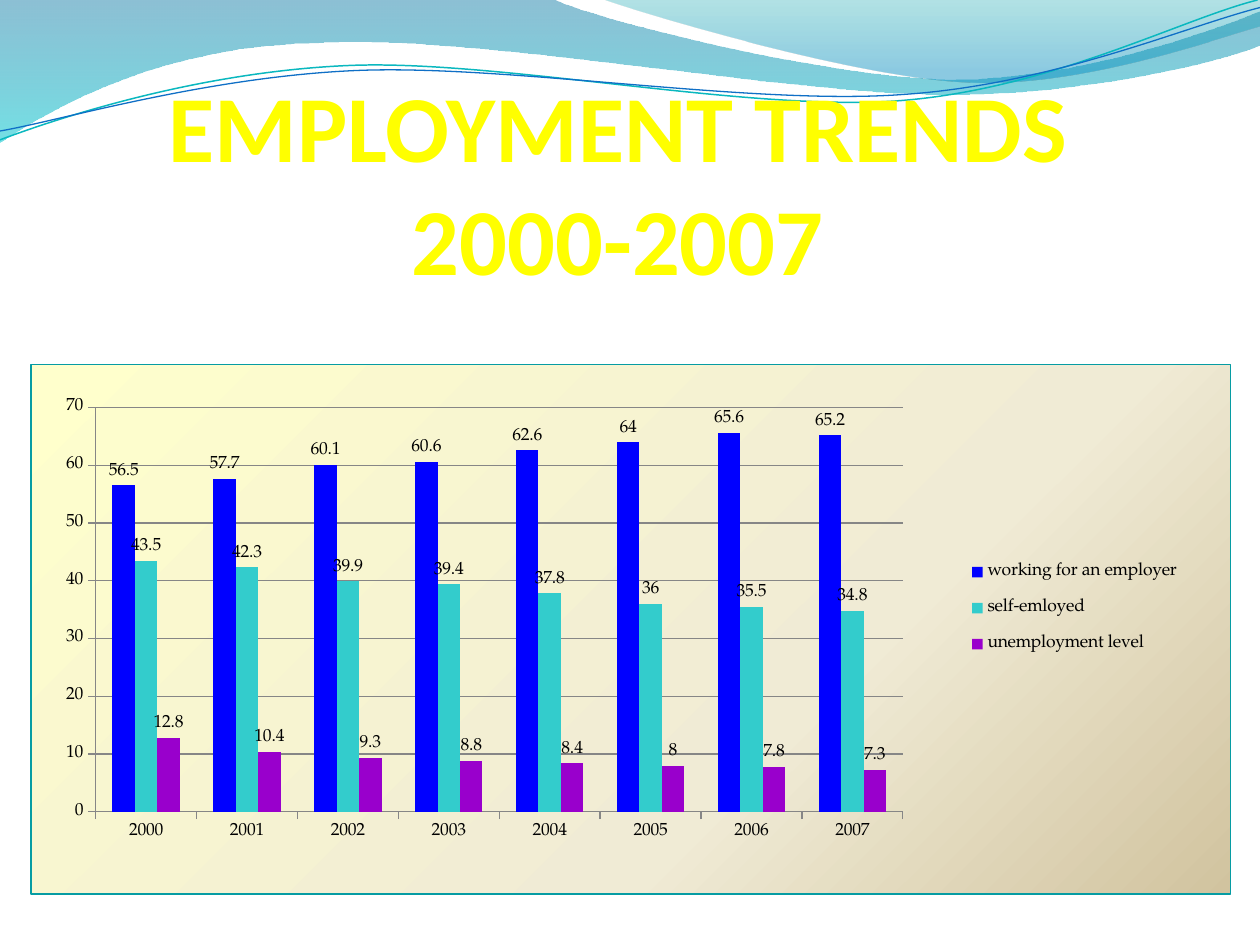
from pptx import Presentation
from pptx.chart.data import CategoryChartData
from pptx.dml.color import RGBColor
from pptx.enum import chart as ch, text
from pptx.oxml import ns, parse_xml
from pptx.util import Inches, Pt

COLORS = {
    "title": "FFFF00", "text": "000000", "axis": "868686", "border": "069CA3",
    "teal line": "0AB8BF", "blue line": "0F6FC6",
    "employer": "0000FF", "self": "33CCCC", "unemployed": "9900CC",
}
GRADIENTS = {
    "left wave": [(0, "0074A1", 45), (100, "00C6CF", 55)],
    "right wave": [(0, "00A1A9", 30), (80, "008BBF", 45)],
    "chart": [(0, "FFFFCC", 100), (65, "F0EBD5", 100), (100, "D1C39F", 100)],
}
YEARS = [str(year) for year in range(2000, 2008)]
SERIES = [
    ("working for an employer", "employer", (56.5, 57.7, 60.1, 60.6, 62.6, 64, 65.6, 65.2)),
    ("self-emloyed", "self", (43.5, 42.3, 39.9, 39.4, 37.8, 36, 35.5, 34.8)),
    ("unemployment level", "unemployed", (12.8, 10.4, 9.3, 8.8, 8.4, 8, 7.8, 7.3)),
]
WAVES = [
    ("left wave", [(0, 0), (4.4, 0), (4.76, 0.17, 6.64, 0.63, 7.58, 0.63),
                   (8.53, 0.63, 9.58, 0.26, 10, 0.09), (10, 0.36),
                   (9.83, 0.44, 8.7, 0.76, 7.46, 0.75), (6.22, 0.75, 3.82, 0.28, 2.57, 0.34),
                   (1.29, 0.36, 0.46, 0.83, 0, 1.13)]),
    ("right wave", [(4.79, 0), (5.09, 0.11, 6.82, 0.62, 7.69, 0.65),
                    (8.56, 0.69, 9.61, 0.32, 10, 0.21), (10, 0)]),
]
STRANDS = [
    ("teal line", 0.85, [(0, 1.11), (0.48, 0.93, 1.58, 0.57, 2.77, 0.52),
                         (3.95, 0.47, 5.93, 0.89, 7.13, 0.8), (8.33, 0.71, 9.38, 0.15, 9.98, 0)]),
    ("blue line", 0.75, [(0, 1.04), (0.47, 0.96, 1.64, 0.61, 2.83, 0.56),
                         (4.03, 0.51, 5.97, 0.84, 7.17, 0.75), (8.36, 0.67, 9.41, 0.21, 10, 0.06)]),
]


def rgb(name):
    """Return a named colour."""
    return RGBColor.from_string(COLORS[name])


def gradient(name, angle):
    """Return a linear gradient fill element, its angle measured clockwise."""
    stops = ""
    for pos, color, opacity in GRADIENTS[name]:
        alpha = f'<a:alpha val="{opacity * 1000}"/>' if opacity < 100 else ""
        stops += f'<a:gs pos="{pos * 1000}"><a:srgbClr val="{color}">{alpha}</a:srgbClr></a:gs>'
    return parse_xml(f'<a:gradFill {ns.nsdecls("a")} rotWithShape="1"><a:gsLst>{stops}</a:gsLst>'
                     f'<a:lin ang="{angle * 60000}" scaled="0"/></a:gradFill>')


def add_curve(s, steps, closed):
    """Add an outline whose six-number steps are cubic curves."""
    points = [(Inches(x), Inches(y)) for step in steps
              for x, y in zip(step[::2], step[1::2])]
    builder = s.shapes.build_freeform(*points[0])
    builder.add_line_segments(points[1:], close=closed)
    sp = builder.convert_to_shape()
    sp.shadow.inherit = False
    sp.fill.background()
    lines = iter(sp._element.findall(".//" + ns.qn("a:lnTo")))
    for step in steps[1:]:
        line = next(lines)
        if len(step) == 6:
            curve = parse_xml(f'<a:cubicBezTo {ns.nsdecls("a")}/>')
            line.addprevious(curve)
            for node in (line, next(lines), next(lines)):
                curve.append(node[0])
                node.getparent().remove(node)
    return sp


def add_header(s):
    """Draw the waves and strands along the top edge."""
    for name, steps in WAVES:
        sp = add_curve(s, steps, True)
        sp.line.fill.background()
        props = sp._element.spPr
        props.replace(props.find(ns.qn("a:noFill")), gradient(name, 90))
    for name, width, steps in STRANDS:
        sp = add_curve(s, steps, False)
        sp.line.color.rgb = rgb(name)
        sp.line.width = Pt(width)


def add_text(s, box, content, *, size, font, color, bold=False):
    """Add centred text standing on the bottom of its box."""
    sp = s.shapes.add_textbox(*map(Inches, box))
    tf = sp.text_frame
    tf.word_wrap = True
    tf.vertical_anchor = text.MSO_ANCHOR.BOTTOM
    tf.margin_left = tf.margin_right = tf.margin_bottom = 0
    tf.margin_top = Inches(0.05)
    p = tf.paragraphs[0]
    p.text = content
    p.alignment = text.PP_ALIGN.CENTER
    for r in p.runs:
        r.font.size, r.font.name, r.font.bold = Pt(size), font, bold
        r.font.color.rgb = rgb(color)


def set_layout(element, box, inner=False):
    """Place a chart part by fractions of the chart area."""
    for old in element.findall(ns.qn("c:layout")):
        element.remove(old)
    target = '<c:layoutTarget val="inner"/>' if inner else ""
    modes = '<c:xMode val="edge"/><c:yMode val="edge"/>'
    sizes = "".join(f'<c:{key} val="{value}"/>' for key, value in zip("xywh", box))
    layout = parse_xml(f'<c:layout {ns.nsdecls("c")}><c:manualLayout>{target}{modes}{sizes}'
                       '</c:manualLayout></c:layout>')
    if inner:
        element.insert(0, layout)
    else:
        element.find(ns.qn("c:legendPos")).addnext(layout)


def style_chart_area(chart):
    """Give the chart area its gradient and border."""
    props = parse_xml(f'<c:spPr {ns.nsdecls("c", "a")}><a:ln w="{Pt(0.75)}"><a:solidFill>'
                      f'<a:srgbClr val="{COLORS["border"]}"/></a:solidFill></a:ln></c:spPr>')
    props.insert(0, gradient("chart", 45))
    chart._chartSpace.find(ns.qn("c:chart")).addnext(props)


def add_chart(s, box):
    """Add the clustered columns of employment by year."""
    data = CategoryChartData()
    data.categories = YEARS
    for name, _, values in SERIES:
        data.add_series(name, values)
    chart = s.shapes.add_chart(ch.XL_CHART_TYPE.COLUMN_CLUSTERED, *map(Inches, box), data).chart
    chart.has_title = False
    chart.font.name, chart.font.size = "TeX Gyre Pagella", Pt(10)
    chart.font.color.rgb = rgb("text")
    style_chart_area(chart)

    plot = chart.plots[0]
    plot.gap_width, plot.overlap, plot.vary_by_categories = 150, 0, False
    for series, (_, color, _) in zip(plot.series, SERIES):
        series.format.fill.solid()
        series.format.fill.fore_color.rgb = rgb(color)
        series.invert_if_negative = False
        series.data_labels.show_value = True
        series.data_labels.position = ch.XL_LABEL_POSITION.OUTSIDE_END

    axis = chart.value_axis
    axis.minimum_scale, axis.maximum_scale, axis.major_unit = 0, 70, 10
    axis.has_major_gridlines = True
    for part in (axis, chart.category_axis, axis.major_gridlines):
        part.format.line.color.rgb = rgb("axis")
        part.format.line.width = Pt(0.75)
    for part in (axis, chart.category_axis):
        part.major_tick_mark = ch.XL_TICK_MARK.OUTSIDE

    chart.has_legend = True
    chart.legend.position = ch.XL_LEGEND_POSITION.RIGHT
    chart.legend.include_in_layout = False
    set_layout(chart.legend._element, (0.77, 0.34, 0.2, 0.24))
    set_layout(chart._chartSpace.find(".//" + ns.qn("c:plotArea")),
               (0.054, 0.081, 0.673, 0.764), inner=True)


def main():
    """Build the slide and save it."""
    prs = Presentation()
    prs.slide_width, prs.slide_height = Inches(10), Inches(7.5)
    s = prs.slides.add_slide(prs.slide_layouts[6])
    add_header(s)
    add_text(s, (0.39, 0.39, 9.03, 1.95), "EMPLOYMENT TRENDS\v2000-2007",
             size=54, font="Calibri", color="title", bold=True)
    add_chart(s, (0.24, 2.89, 9.53, 4.21))
    prs.save("out.pptx")


if __name__ == "__main__":
    main()
